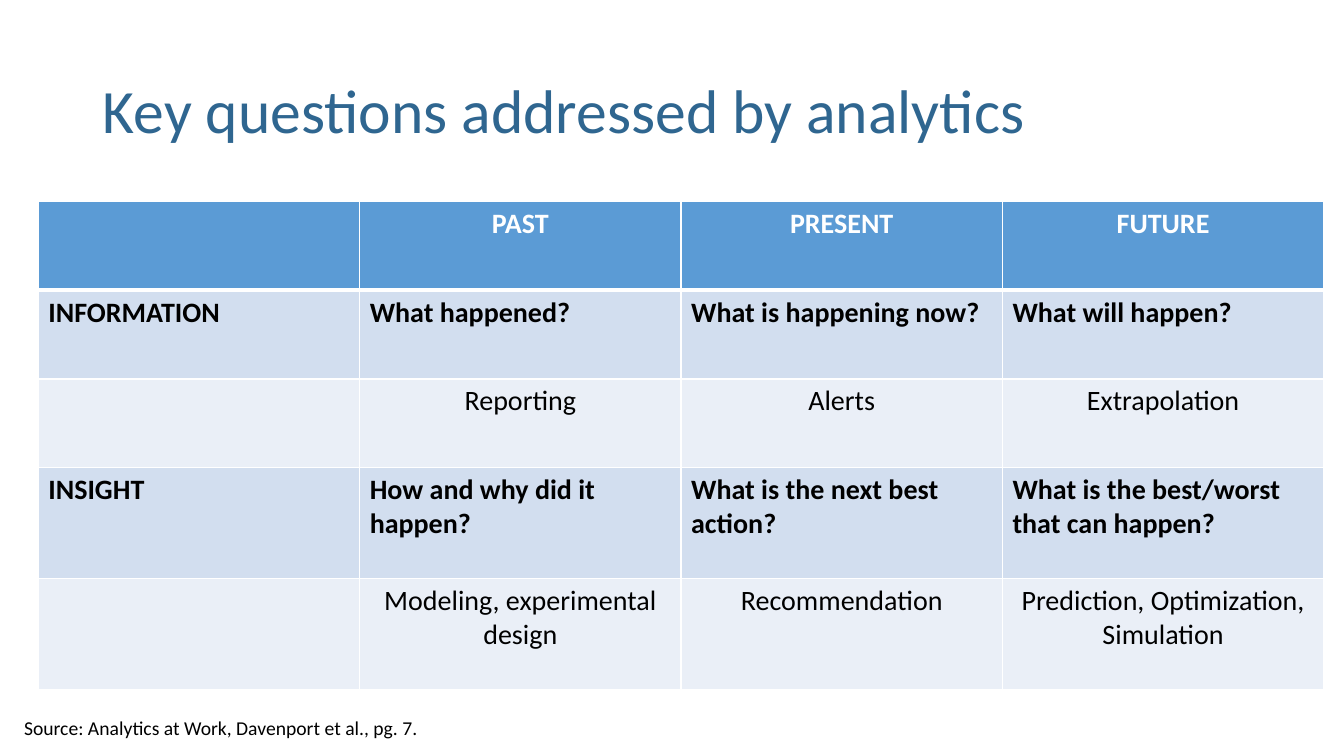
from lxml.etree import SubElement
from pptx import Presentation
from pptx.dml.color import RGBColor
from pptx.enum.text import MSO_ANCHOR as Anchor, MSO_AUTO_SIZE as AutoSize, PP_ALIGN as Align
from pptx.oxml.ns import qn
from pptx.util import Inches, Pt

WHITE = RGBColor(0xFF, 0xFF, 0xFF)
BLACK = RGBColor(0, 0, 0)
TITLE_BLUE = RGBColor(0x2F, 0x66, 0x90)
HEADER_BLUE = RGBColor(0x5B, 0x9B, 0xD5)
QUESTION_BLUE = RGBColor(0xD2, 0xDE, 0xEF)
ANSWER_BLUE = RGBColor(0xEA, 0xEF, 0xF7)

HEADER = dict(fill=HEADER_BLUE, color=WHITE, bold=True, align=Align.CENTER)
QUESTION = dict(fill=QUESTION_BLUE, color=BLACK, bold=True, align=Align.LEFT)
ANSWER = dict(fill=ANSWER_BLUE, color=BLACK, bold=False, align=Align.CENTER)

ROWS = [
    (0.88, HEADER, ["", "PAST", "PRESENT", "FUTURE"]),
    (0.88, QUESTION, ["INFORMATION", "What happened?", "What is happening now?", "What will happen?"]),
    (0.88, ANSWER, ["", "Reporting", "Alerts", "Extrapolation"]),
    (1.1, QUESTION, ["INSIGHT", "How and why did it happen?", "What is the next best action?",
                     "What is the best/worst that can happen?"]),
    (1.1, ANSWER, ["", "Modeling, experimental design", "Recommendation",
                   "Prediction, Optimization, Simulation"]),
]


def write(frame, text, size=20, color=BLACK, bold=False, align=Align.LEFT, spacing=None, font="Calibri"):
    paragraph = frame.paragraphs[0]
    paragraph.alignment = align
    paragraph.line_spacing = spacing
    target = paragraph
    if text:
        target = paragraph.add_run()
        target.text = text
    target.font.name = font
    target.font.size = Pt(size)
    target.font.bold = bold
    target.font.color.rgb = color


class AnalyticsSlide:
    """Builds the title, question table and source line of one slide."""

    def __init__(self, deck):
        self.slide = deck.slides.add_slide(deck.slide_layouts[5])

    def title(self, text, left, top, width, height):
        heading = self.slide.shapes.title
        heading.left, heading.top = Inches(left), Inches(top)
        heading.width, heading.height = Inches(width), Inches(height)
        heading.text_frame.vertical_anchor = Anchor.MIDDLE
        write(heading.text_frame, text, size=44, color=TITLE_BLUE, spacing=0.9)

    def table(self, rows, left, top, width):
        height = sum(row[0] for row in rows)
        columns = len(rows[0][2])
        questions = self.slide.shapes.add_table(
            len(rows), columns, Inches(left), Inches(top), Inches(width), Inches(height)).table
        for index, (row_height, style, texts) in enumerate(rows):
            questions.rows[index].height = Inches(row_height)
            for column, text in enumerate(texts):
                self.cell(questions.cell(index, column), text,
                          top=3 if index == 1 else 1, bottom=3 if index == 0 else 1, **style)

    def cell(self, cell, text, top, bottom, fill, **style):
        properties = cell._tc.get_or_add_tcPr()
        for side, points in (("L", 1), ("R", 1), ("T", top), ("B", bottom)):
            border = SubElement(properties, qn(f"a:ln{side}"), w=str(Pt(points)))
            SubElement(SubElement(border, qn("a:solidFill")), qn("a:srgbClr"), val=str(WHITE))
        cell.fill.solid()
        cell.fill.fore_color.rgb = fill
        write(cell.text_frame, text, **style)

    def source(self, text, left, top, width, height):
        box = self.slide.shapes.add_textbox(Inches(left), Inches(top), Inches(width), Inches(height))
        box.text_frame.word_wrap = True
        box.text_frame.auto_size = AutoSize.SHAPE_TO_FIT_TEXT
        write(box.text_frame, text, size=14)


def main():
    deck = Presentation()
    deck.slide_width, deck.slide_height = Inches(13.33), Inches(7.5)
    page = AnalyticsSlide(deck)
    page.title("Key questions addressed by analytics", 0.92, 0.4, 11.5, 1.45)
    page.table(ROWS, 0.38, 2, 12.75)
    page.source("Source: Analytics at Work, Davenport et al., pg. 7.", 0.14, 7.05, 7.17, 0.34)
    deck.save("out.pptx")


if __name__ == "__main__":
    main()
